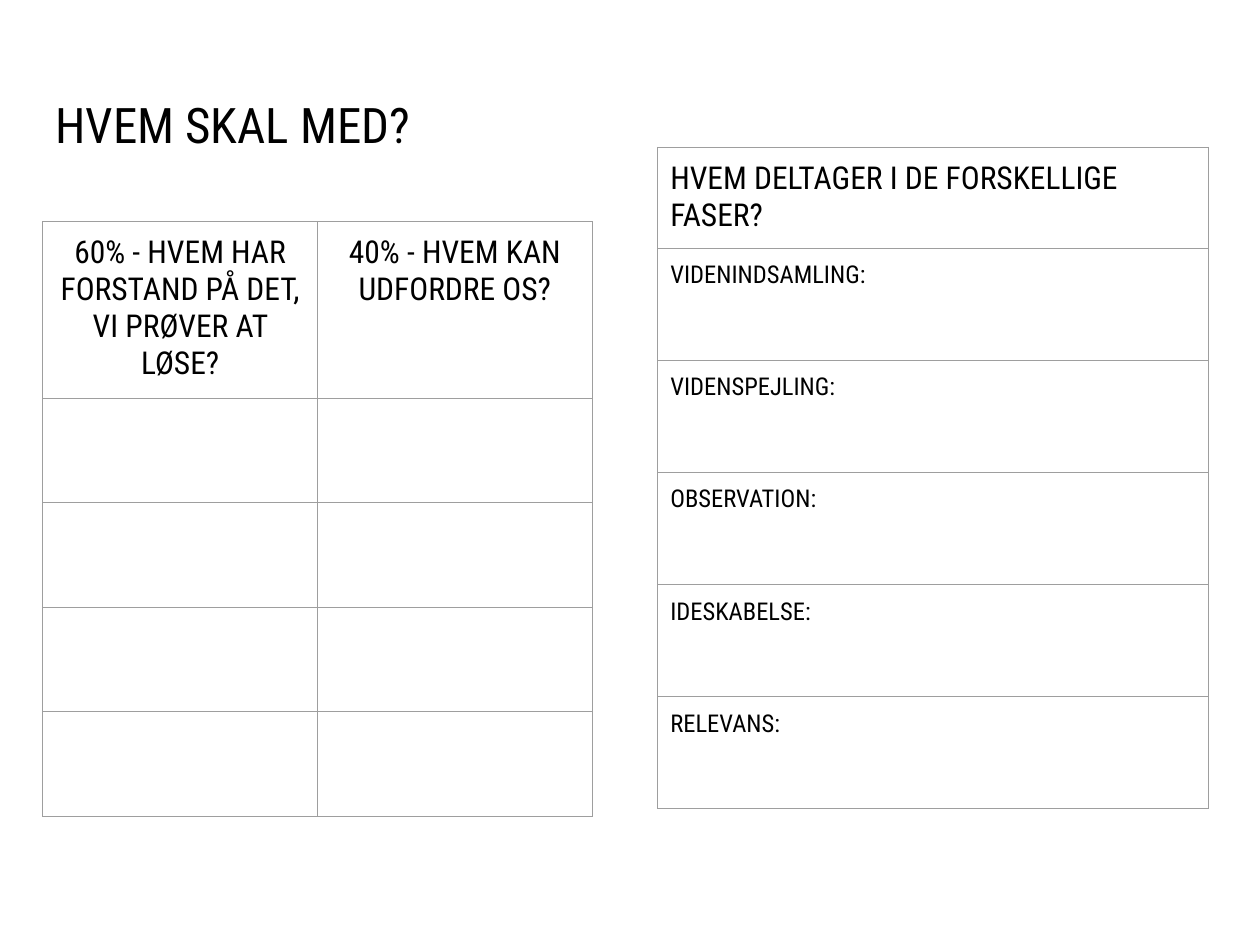
"""Build the participant planning slide with its two worksheet tables."""
from lxml import etree
from pptx import Presentation
from pptx.dml.color import RGBColor
from pptx.enum.text import MSO_ANCHOR, PP_ALIGN
from pptx.oxml.ns import qn
from pptx.util import Inches, Pt

LEFT, CENTER = PP_ALIGN.LEFT, PP_ALIGN.CENTER
TOP = MSO_ANCHOR.TOP
FONT = "Roboto Condensed"
INK, RULE = "000000", "9E9E9E"
NO_STYLE = "{2D5ABB26-0587-4C30-8999-92F81FD0307C}"
PAD = Inches(0.1)


def add_text(tf, text, size, align=LEFT):
    p = tf.paragraphs[0]
    p.alignment = align
    r = p.add_run()
    r.text = text
    r.font.name = FONT
    r.font.size = Pt(size)
    r.font.color.rgb = RGBColor.from_string(INK)


def add_grid(s, left, top, col_width, row_heights, rows, align, sizes):
    n_cols = len(rows[0])
    frame = s.shapes.add_table(len(rows), n_cols, Inches(left), Inches(top),
                               Inches(col_width * n_cols), Inches(sum(row_heights)))
    table = frame.table
    table.first_row = table.horz_banding = False
    table._tbl.tblPr.find(qn("a:tableStyleId")).text = NO_STYLE
    for col in table.columns:
        col.width = Inches(col_width)
    for i, (height, texts) in enumerate(zip(row_heights, rows)):
        table.rows[i].height = Inches(height)
        for j, text in enumerate(texts):
            cell = table.cell(i, j)
            cell.margin_left = cell.margin_right = PAD
            cell.margin_top = cell.margin_bottom = PAD
            cell.vertical_anchor = TOP
            cell.fill.background()
            if text:
                add_text(cell.text_frame, text, sizes[min(i, 1)], align)
            tcPr = cell._tc.get_or_add_tcPr()
            for k, side in enumerate(("a:lnL", "a:lnR", "a:lnT", "a:lnB")):
                ln = etree.Element(qn(side), w=str(Pt(0.75)))
                fill = etree.SubElement(ln, qn("a:solidFill"))
                etree.SubElement(fill, qn("a:srgbClr"), val=RULE)
                tcPr.insert(k, ln)


prs = Presentation()
prs.slide_width, prs.slide_height = Inches(10), Inches(7.5)
s = prs.slides.add_slide(prs.slide_layouts[6])

sp = s.shapes.add_textbox(Inches(0.34), Inches(0.65), Inches(9.32), Inches(0.83))
tf = sp.text_frame
tf.word_wrap = True
tf.vertical_anchor = TOP
tf.margin_left = tf.margin_right = tf.margin_top = tf.margin_bottom = PAD
add_text(tf, "HVEM SKAL MED?", 28)

people = [("60% - HVEM HAR FORSTAND PÅ DET, VI PRØVER AT LØSE?",
           "40% - HVEM KAN UDFORDRE OS?")] + [("", "")] * 4
add_grid(s, 0.34, 1.76, 2.18, [1.37] + [0.83] * 4, people, CENTER, (18, 18))

phases = [("HVEM DELTAGER I DE FORSKELLIGE FASER?",), ("VIDENINDSAMLING:",),
          ("VIDENSPEJLING:",), ("OBSERVATION:",), ("IDESKABELSE:",), ("RELEVANS:",)]
add_grid(s, 5.22, 1.17, 4.37, [0.79] + [0.89] * 5, phases, LEFT, (18, 14))

prs.save("out.pptx")
